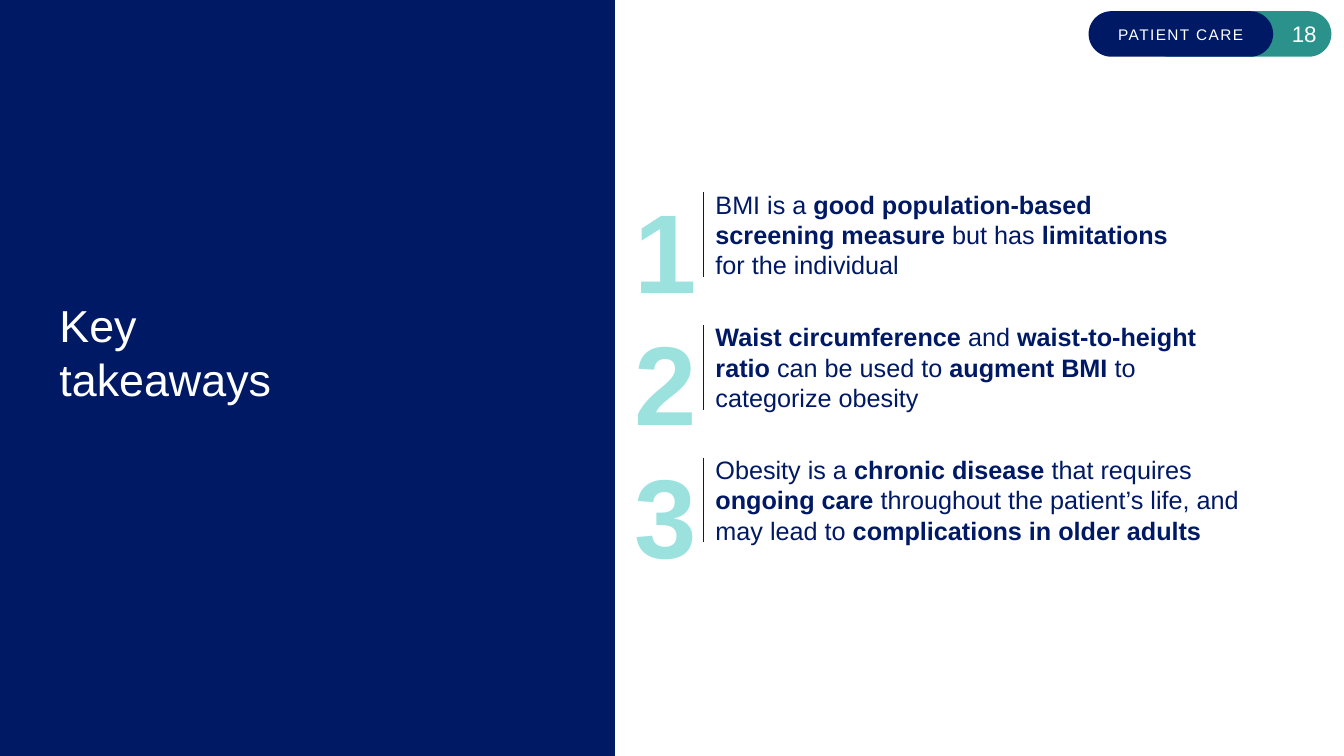
from lxml.etree import SubElement
from pptx import Presentation
from pptx.dml.color import RGBColor
from pptx.enum.shapes import MSO_CONNECTOR as Connector, MSO_SHAPE as Shape
from pptx.enum.text import MSO_ANCHOR as Anchor, MSO_AUTO_SIZE as AutoSize, PP_ALIGN as Align
from pptx.oxml.ns import qn
from pptx.util import Pt

NAVY = RGBColor(0x00, 0x19, 0x65)
TEAL = RGBColor(0x2A, 0x91, 0x8B)
AQUA = RGBColor(0x9B, 0xE2, 0xDE)
WHITE = RGBColor(0xFF, 0xFF, 0xFF)

TAKEAWAYS = [
    ("BMI is a **good population-based screening measure **but has **limitations** for the individual", 348.5),
    ("**Waist circumference **and **waist-to-height ratio **can be used to **augment BMI **to categorize obesity", 400.3),
    ("Obesity is a **chronic disease **that requires **ongoing care** throughout the patient’s life, "
     "and may lead to **complications in older adults**", 400.3),
]
FIRST_TOP, PITCH = 110.2, 94.7


class SlideBuilder:
    """Draws styled elements on the current slide or group."""

    def __init__(self, slide, font_name):
        self.slide = slide
        self.shapes = slide.shapes
        self.font_name = font_name

    def start_group(self):
        self.shapes = self.slide.shapes.add_group_shape().shapes

    def apply(self, target, formats):
        for attribute, value in formats.items():
            setattr(target, attribute, value)

    def fill_text(self, shape, text, size, color, margins, frame=None, paragraph=None, bold=False, spacing=0):
        text_frame = shape.text_frame
        sides = ("margin_left", "margin_top", "margin_right", "margin_bottom")
        self.apply(text_frame, {side: Pt(margin) for side, margin in zip(sides, margins * 2)})
        self.apply(text_frame, {"word_wrap": True, **(frame or {})})
        first = text_frame.paragraphs[0]
        self.apply(first, paragraph or {})
        for line_number, line in enumerate(text.split("\n")):
            if line_number:
                first.add_line_break()
            for part_number, part in enumerate(line.split("**")):
                if not part:
                    continue
                run = first.add_run()
                run.text = part
                emphasis = bold or part_number % 2 == 1
                self.apply(run.font, {"name": self.font_name, "size": Pt(size), "bold": emphasis})
                run.font.color.rgb = color
                if spacing:
                    run._r.get_or_add_rPr().set("spc", str(spacing * 100))

    def block(self, kind, left, top, width, height, color):
        block = self.shapes.add_shape(kind, Pt(left), Pt(top), Pt(width), Pt(height))
        block.shadow.inherit = False
        block.fill.solid()
        block.fill.fore_color.rgb = color
        block.line.fill.background()
        return block

    def pill(self, left, color, text, size, align, spacing=0):
        pill = self.block(Shape.ROUNDED_RECTANGLE, left, 8, 131.8, 32.5, color)
        pill.adjustments[0] = 0.5
        self.fill_text(pill, text, size, WHITE, (5.76, 2.88), {"vertical_anchor": Anchor.MIDDLE},
                       {"alignment": align}, spacing=spacing)

    def text(self, left, top, width, height, text, size, color, margins=(0, 0), **formats):
        box = self.shapes.add_textbox(Pt(left), Pt(top), Pt(width), Pt(height))
        self.fill_text(box, text, size, color, margins, **formats)

    def rule(self, left, top, height):
        rule = self.shapes.add_connector(Connector.STRAIGHT, Pt(left), Pt(top), Pt(left), Pt(top + height))
        rule.line.color.rgb = NAVY
        rule.line.width = Pt(1)
        SubElement(rule._element.spPr, qn("a:effectLst"))


def main():
    deck = Presentation()
    deck.slide_width, deck.slide_height = Pt(960), Pt(540)
    builder = SlideBuilder(deck.slides.add_slide(deck.slide_layouts[6]), "Arial")

    builder.block(Shape.RECTANGLE, 0, 0, 439.2, 540, NAVY)
    builder.pill(819.2, TEAL, "18", 16, Align.RIGHT)
    builder.pill(777.6, NAVY, "PATIENT CARE", 11, Align.CENTER, spacing=1)
    builder.text(42.5, 32.4, 364.3, 437.8, "Key \ntakeaways", 32, WHITE,
                 frame={"vertical_anchor": Anchor.MIDDLE})

    grow = {"auto_size": AutoSize.SHAPE_TO_FIT_TEXT}
    for index, (takeaway, width) in enumerate(TAKEAWAYS):
        top = FIRST_TOP + index * PITCH
        builder.start_group()
        builder.text(452.9, top, 44.6, 105.8, str(index + 1), 80, AQUA, bold=True,
                     frame={**grow, "word_wrap": False}, paragraph={"line_spacing": 1.2})
        builder.text(504, top + 21.4, width, 72.7, takeaway, 18, NAVY, (7.2, 3.6), frame=grow)
        builder.rule(502.6, top + 27.3, 60.5)

    deck.save("out.pptx")


if __name__ == "__main__":
    main()
